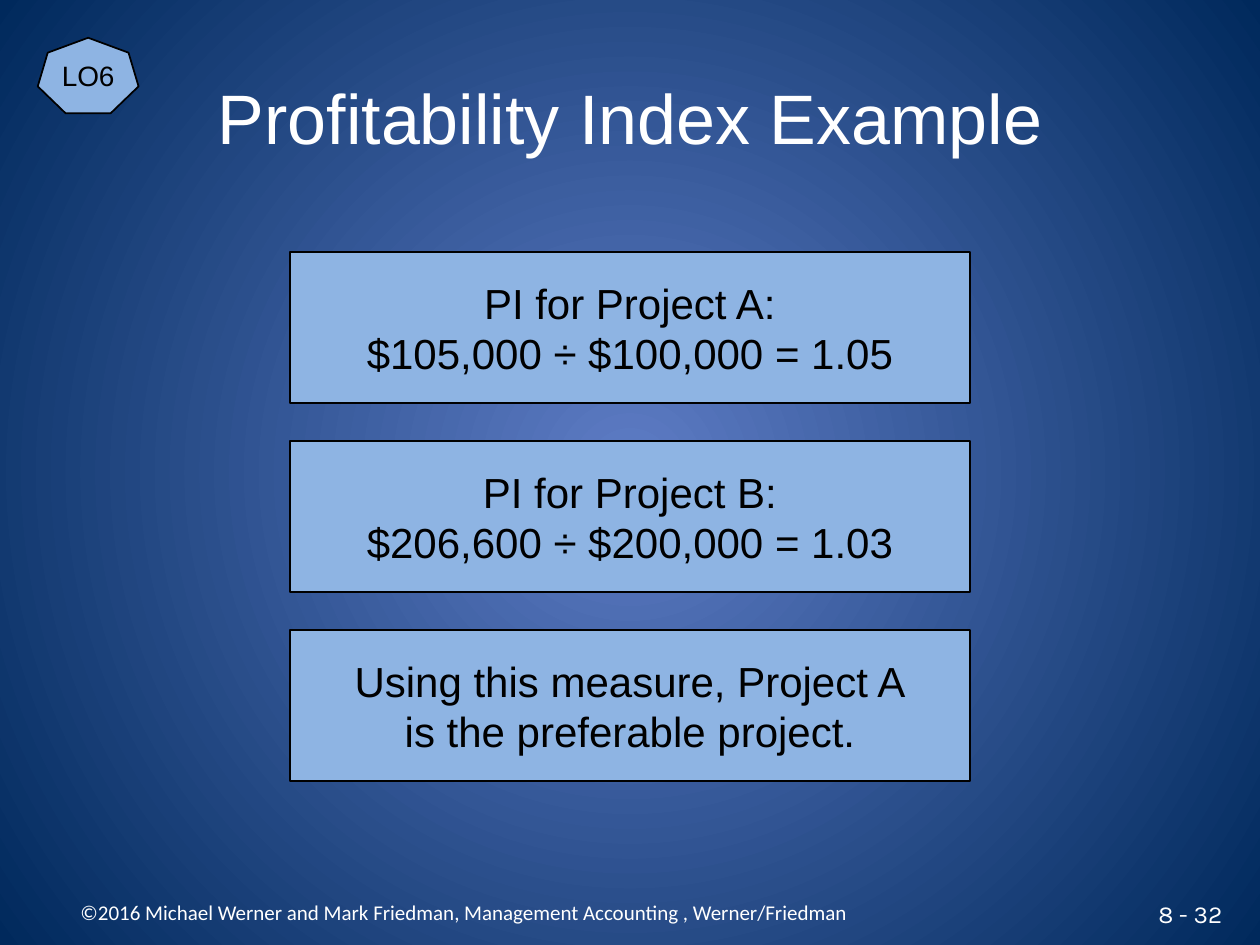
from lxml import etree
from pptx import Presentation
from pptx.dml.color import RGBColor
from pptx.enum.shapes import MSO_SHAPE
from pptx.enum.text import MSO_ANCHOR, PP_ALIGN
from pptx.oxml.ns import qn
from pptx.util import Pt

RECTANGLE, HEPTAGON = MSO_SHAPE.RECTANGLE, MSO_SHAPE.HEPTAGON
MIDDLE, BOTTOM = MSO_ANCHOR.MIDDLE, MSO_ANCHOR.BOTTOM
LEFT, CENTER, RIGHT = PP_ALIGN.LEFT, PP_ALIGN.CENTER, PP_ALIGN.RIGHT

COLORS = {
    "glow": "5E7CC5",
    "edge": "00295C",
    "panel": "8EB4E3",
    "ink": "000000",
    "light": "FFFFFF",
}
TITLE_ONLY = 5
CALCULATIONS = [
    ["PI for Project A:", "$105,000 ÷ $100,000 = 1.05"],
    ["PI for Project B:", "$206,600 ÷ $200,000 = 1.03"],
    ["Using this measure, Project A", "is the preferable project."],
]


def rgb(name):
    return RGBColor.from_string(COLORS[name])


def write(frame, lines, size, font, color, align, anchor=MIDDLE, wrap=True):
    frame.word_wrap = wrap
    frame.vertical_anchor = anchor
    frame.text = "\n".join(lines)
    for paragraph in frame.paragraphs:
        paragraph.alignment = align
        paragraph.font.size = Pt(size)
        paragraph.font.name = font
        paragraph.font.color.rgb = rgb(color)


def paint_background(slide):
    fill = slide.background.fill
    fill.gradient()
    for stop, position, name in zip(fill.gradient_stops, (0, 1), ("glow", "edge")):
        stop.position = position
        stop.color.rgb = rgb(name)
    gradient = slide.background._cSld.find(".//" + qn("a:gradFill"))
    gradient.remove(gradient.find(qn("a:lin")))
    circle = etree.SubElement(gradient, qn("a:path"), {"path": "circle"})
    center = {side: "50000" for side in "ltrb"}
    etree.SubElement(circle, qn("a:fillToRect"), center)


def place_title(slide, left, top, width, height):
    title = slide.shapes.title
    title.left, title.top = Pt(left), Pt(top)
    title.width, title.height = Pt(width), Pt(height)
    write(title.text_frame, ["Profitability Index Example"], 40, "Arial", "light", CENTER)


def add_panel(slide, kind, left, top, width, height):
    panel = slide.shapes.add_shape(kind, Pt(left), Pt(top), Pt(width), Pt(height))
    panel.shadow.inherit = False
    panel.fill.solid()
    panel.fill.fore_color.rgb = rgb("panel")
    panel.line.color.rgb = rgb("ink")
    panel.line.width = Pt(1)
    return panel.text_frame


def add_calculations(slide, left, top, width, height, gap=21.6):
    count = len(CALCULATIONS)
    panel_height = (height - gap * (count - 1)) / count
    for index, lines in enumerate(CALCULATIONS):
        panel_top = top + index * (panel_height + gap)
        frame = add_panel(slide, RECTANGLE, left, panel_top, width, panel_height)
        write(frame, lines, 24, "Arial", "ink", CENTER, wrap=False)


def add_objective_badge(slide, left, top, width, height):
    frame = add_panel(slide, HEPTAGON, left, top, width, height)
    write(frame, ["LO6"], 16, "Arial", "ink", CENTER, BOTTOM)


def add_footer(slide, left, top, width, height):
    credit = slide.shapes.add_textbox(Pt(left), Pt(top), Pt(width), Pt(height)).text_frame
    credit.margin_left = Pt(10)
    line = "©2016 Michael Werner and Mark Friedman, Management Accounting , Werner/Friedman"
    write(credit, [line], 12, "Calibri", "light", LEFT)


def add_page_number(slide, left, top, width, height):
    number = slide.shapes.add_textbox(Pt(left), Pt(top), Pt(width), Pt(height)).text_frame
    write(number, ["8 - 32"], 14, "Karla", "light", RIGHT, wrap=False)


def main():
    deck = Presentation()
    deck.slide_width, deck.slide_height = Pt(720), Pt(540)
    slide = deck.slides.add_slide(deck.slide_layouts[TITLE_ONLY])
    paint_background(slide)
    add_page_number(slide, 648, 511.2, 57.6, 21.6)
    place_title(slide, 36, 21.6, 648, 90)
    add_calculations(slide, 165.6, 144, 388.8, 302.4)
    add_objective_badge(slide, 21.6, 21.6, 57.6, 43.2)
    add_footer(slide, 36, 502.56, 540, 37.44)
    deck.save("out.pptx")


if __name__ == "__main__":
    main()
